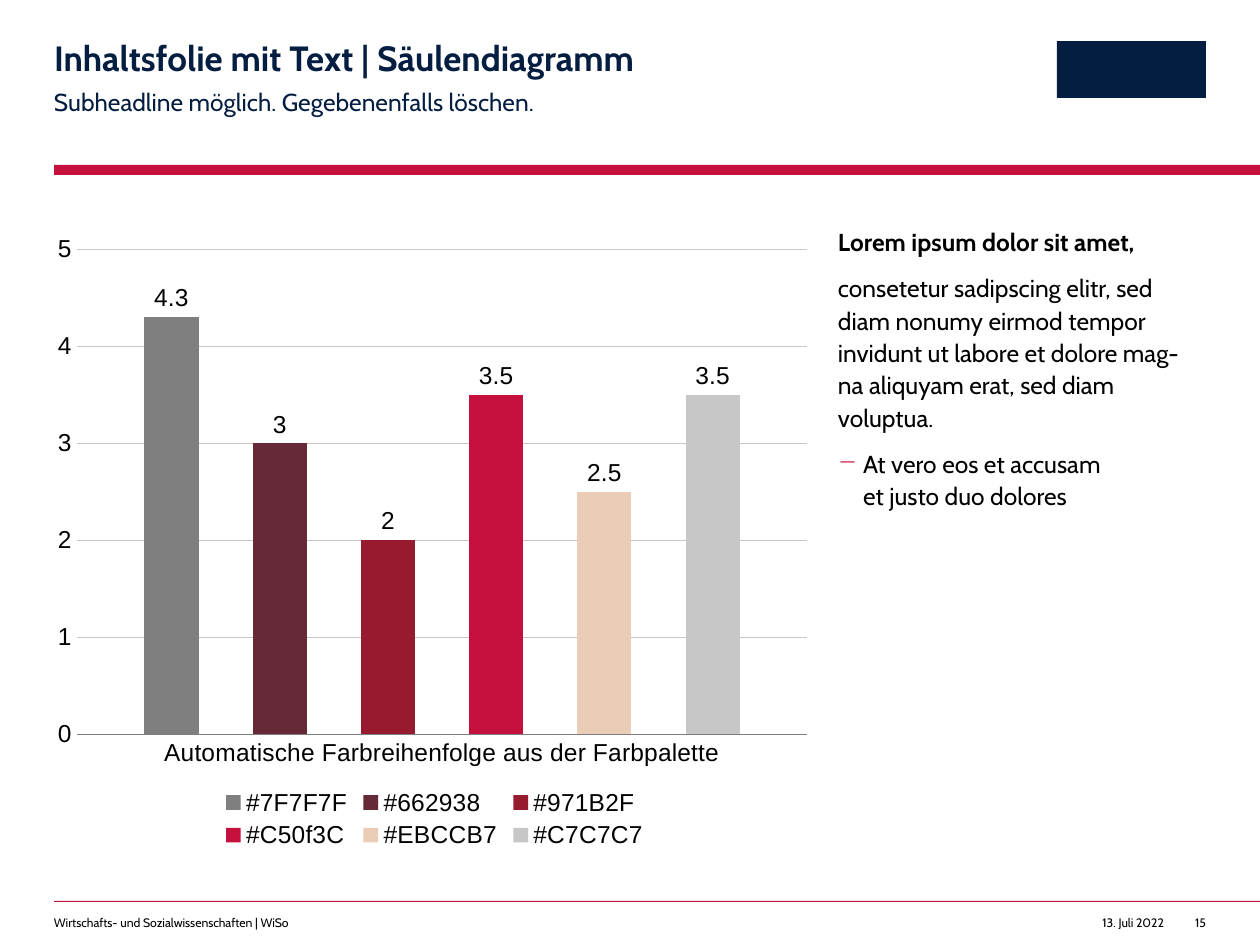
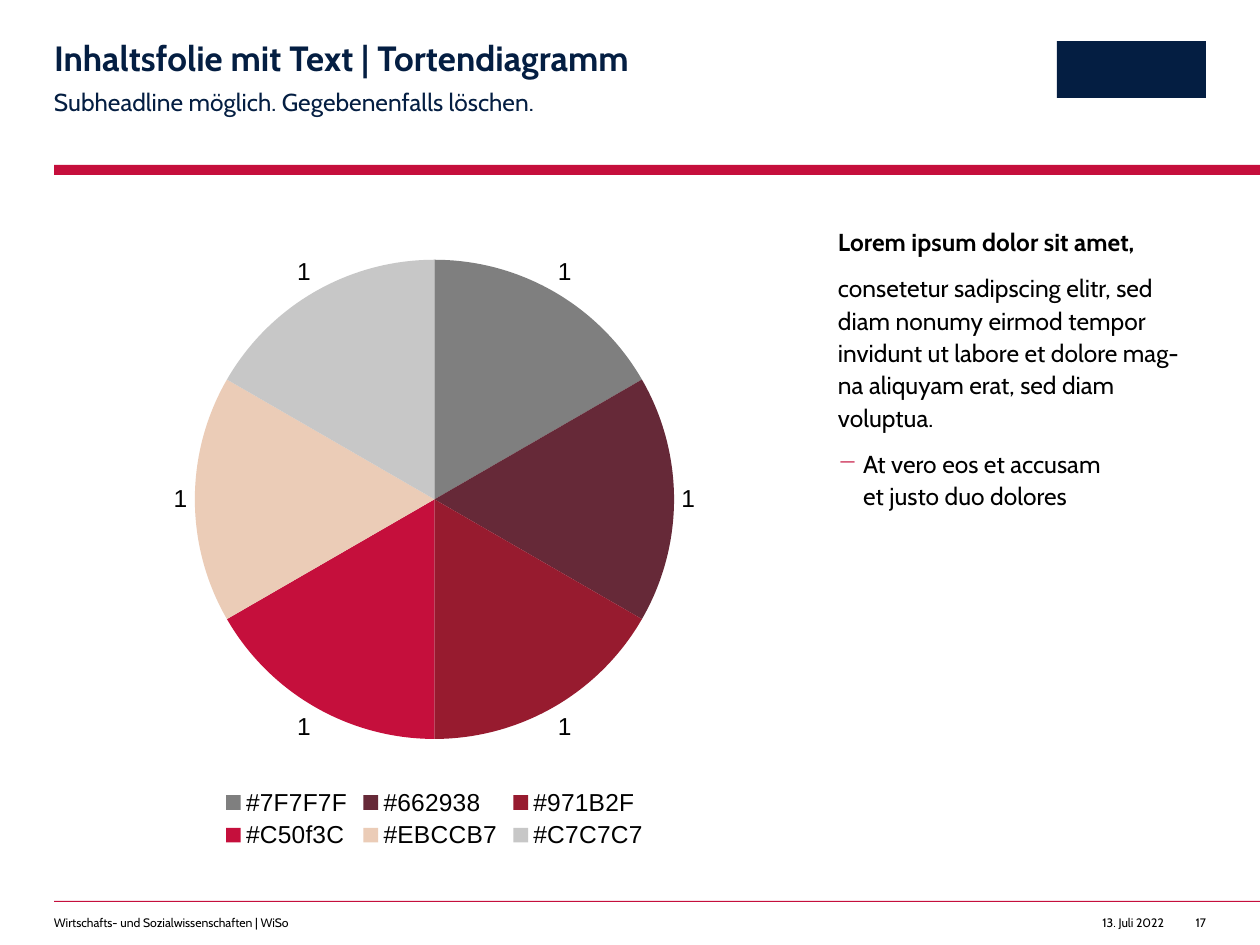
from dataclasses import dataclass

from lxml.etree import SubElement as Sub
from pptx import Presentation
from pptx.chart.data import CategoryChartData as Data
from pptx.dml.color import RGBColor as RGB
from pptx.enum.chart import XL_CHART_TYPE as Kind
from pptx.enum.chart import XL_LABEL_POSITION as Spot
from pptx.enum.chart import XL_LEGEND_POSITION as Side
from pptx.enum.chart import XL_TICK_MARK as Tick
from pptx.enum.shapes import MSO_SHAPE as Shape
from pptx.enum.text import MSO_ANCHOR as Anchor
from pptx.enum.text import MSO_AUTO_SIZE as Fit
from pptx.enum.text import PP_ALIGN as Align
from pptx.oxml import parse_xml
from pptx.oxml.ns import nsdecls, qn
from pptx.util import Pt


@dataclass(frozen=True)
class Theme:
    font: str = "Cabin"
    plot_font: str = "Arial"
    navy: str = "041E42"
    red: str = "C50F3C"
    black: str = "000000"
    grid: str = "C7C7C7"
    axis: str = "7F7F7F"
    title: int = 20
    body: int = 14
    foot: int = 7


THEME = Theme()
SCALE = 914400 / 126  # EMU in one px
WIDE, HIGH = 1260, 945
LEFT, RIGHT = 54, 1206
SWATCHES = ["#7F7F7F", "#662938", "#971B2F", "#C50f3C", "#EBCCB7", "#C7C7C7"]
BODY = [
    "Lorem ipsum dolor sit amet,",
    "consetetur sadipscing elitr, sed diam nonumy eirmod tempor invidunt ut "
    "labore et dolore mag-na aliquyam erat, sed diam voluptua.",
    "At vero eos et accusam\net justo duo dolores",
]


def emu(*lengths):
    return [round(n * SCALE) for n in lengths]


def write(shape, box, lines, size, color, bold=False, align=Align.LEFT,
          pitch=1.0, after=0, inset=0):
    """Place a text shape and fill it with one paragraph per line."""
    shape.left, shape.top, shape.width, shape.height = emu(*box)
    frame = shape.text_frame
    frame.word_wrap, frame.auto_size = True, Fit.NONE
    frame.vertical_anchor = Anchor.TOP
    frame.margin_left = frame.margin_top = frame.margin_bottom = 0
    frame.margin_right = emu(inset)[0]
    for n, line in enumerate(lines):
        para = frame.add_paragraph() if n else frame.paragraphs[0]
        para.text = line
        para.alignment, para.line_spacing = align, pitch
        para.space_before, para.space_after = Pt(0), Pt(after)
        for run in para.runs:
            font = run.font
            font.name, font.size, font.bold = THEME.font, Pt(size), bold
            font.color.rgb = RGB.from_string(color)
    return frame.paragraphs


columns = Data()
columns.categories = ["Automatische Farbreihenfolge aus der Farbpalette"]
for name, value in zip(SWATCHES, [4.3, 3, 2, 3.5, 2.5, 3.5]):
    columns.add_series(name, [value])

shares = Data()
shares.categories = SWATCHES
shares.add_series("Series 1", [1] * len(SWATCHES))

PAGES = [
    ("Säulendiagramm", "15", Kind.COLUMN_CLUSTERED, columns),
    ("Tortendiagramm", "17", Kind.PIE, shares),
]

deck = Presentation()
deck.slide_width, deck.slide_height = emu(WIDE, HIGH)

for topic, number, kind, data in PAGES:
    slide = deck.slides.add_slide(deck.slide_layouts[5])
    shapes = slide.shapes

    # Bands, with a plain block where the emblem sits
    for box, color in [
        ((LEFT, 165, WIDE - LEFT, 10), THEME.red),
        ((LEFT, 901, WIDE - LEFT, 1), THEME.red),
        ((1057, 41, RIGHT - 1057, 57), THEME.navy),
    ]:
        block = shapes.add_shape(Shape.RECTANGLE, *emu(*box))
        block.shadow.inherit = False
        block.fill.solid()
        block.fill.fore_color.rgb = RGB.from_string(color)
        block.line.fill.background()

    # Headings
    write(shapes.title, (LEFT, 41, 707, 38),
          [f"Inhaltsfolie mit Text | {topic}"], THEME.title, THEME.navy,
          bold=True, pitch=0.9)
    write(shapes.add_textbox(0, 0, 0, 0), (LEFT, 84, 707, 30),
          ["Subheadline möglich. Gegebenenfalls löschen."],
          THEME.body, THEME.navy, pitch=1.1, after=8, inset=49)

    # Footer
    for left, right, line, align in [
        (LEFT, 620, "Wirtschafts- und Sozialwissenschaften | WiSo", Align.LEFT),
        (1075, 1164, "13. Juli 2022", Align.RIGHT),
        (1181, RIGHT, number, Align.RIGHT),
    ]:
        write(shapes.add_textbox(0, 0, 0, 0), (left, 915, right - left, 15),
              [line], THEME.foot, THEME.black, align=align)

    # Side text: bold lead, paragraph, dashed item
    lead, _, item = write(
        shapes.add_textbox(0, 0, 0, 0), (838, 224, 369, 630), BODY,
        THEME.body, THEME.black, pitch=1.1, after=8, inset=25)
    lead.runs[0].font.bold = True
    item.level = 1
    props = item._p.get_or_add_pPr()
    indent = emu(25)[0]
    props.set("marL", str(indent))
    props.set("indent", str(-indent))
    Sub(Sub(props, qn("a:buClr")), qn("a:srgbClr")).set("val", THEME.red)
    Sub(props, qn("a:buChar")).set("char", "−")

    # Chart
    chart = shapes.add_chart(kind, *emu(LEFT, 224, 761, 630), data).chart
    chart.has_title = False
    chart.font.name, chart.font.size = THEME.plot_font, Pt(THEME.body)
    chart.font.color.rgb = RGB.from_string(THEME.black)
    chart.has_legend = True
    chart.legend.position = Side.BOTTOM
    chart.legend.include_in_layout = False
    plot = chart.plots[0]
    plot.vary_by_categories = kind == Kind.PIE
    for series in plot.series:
        labels = series.data_labels
        labels.show_value = True
        labels.position = Spot.OUTSIDE_END

    if kind == Kind.PIE:
        parts = [plot.series[0].points[n] for n in range(len(SWATCHES))]
    else:
        parts = plot.series
    for part, name in zip(parts, SWATCHES):
        part.format.fill.solid()
        part.format.fill.fore_color.rgb = RGB.from_string(name[1:].upper())
    if kind == Kind.PIE:
        continue

    # Axes and plot area of the columns
    plot.gap_width, plot.overlap = 250, -100
    base, scale = chart.category_axis, chart.value_axis
    scale.minimum_scale, scale.maximum_scale, scale.major_unit = 0, 5, 1
    scale.has_major_gridlines = True
    scale.format.line.fill.background()
    for axis in (base, scale):
        axis.major_tick_mark = axis.minor_tick_mark = Tick.NONE
    for line, color in [
        (base.format.line, THEME.axis),
        (scale.major_gridlines.format.line, THEME.grid),
    ]:
        line.width = Pt(0.5)
        line.color.rgb = RGB.from_string(color)

    area = chart._chartSpace.chart.plotArea
    for old in area.findall(qn("c:layout")):
        area.remove(old)
    layout = parse_xml(f"<c:layout {nsdecls('c')}/>")
    manual = Sub(layout, qn("c:manualLayout"))
    for tag, value in [
        ("layoutTarget", "inner"), ("xMode", "edge"), ("yMode", "edge"),
        ("x", "0.03"), ("y", "0.04"), ("w", "0.96"), ("h", "0.77"),
    ]:
        Sub(manual, qn(f"c:{tag}")).set("val", value)
    area.insert(0, layout)

deck.save("out.pptx")
